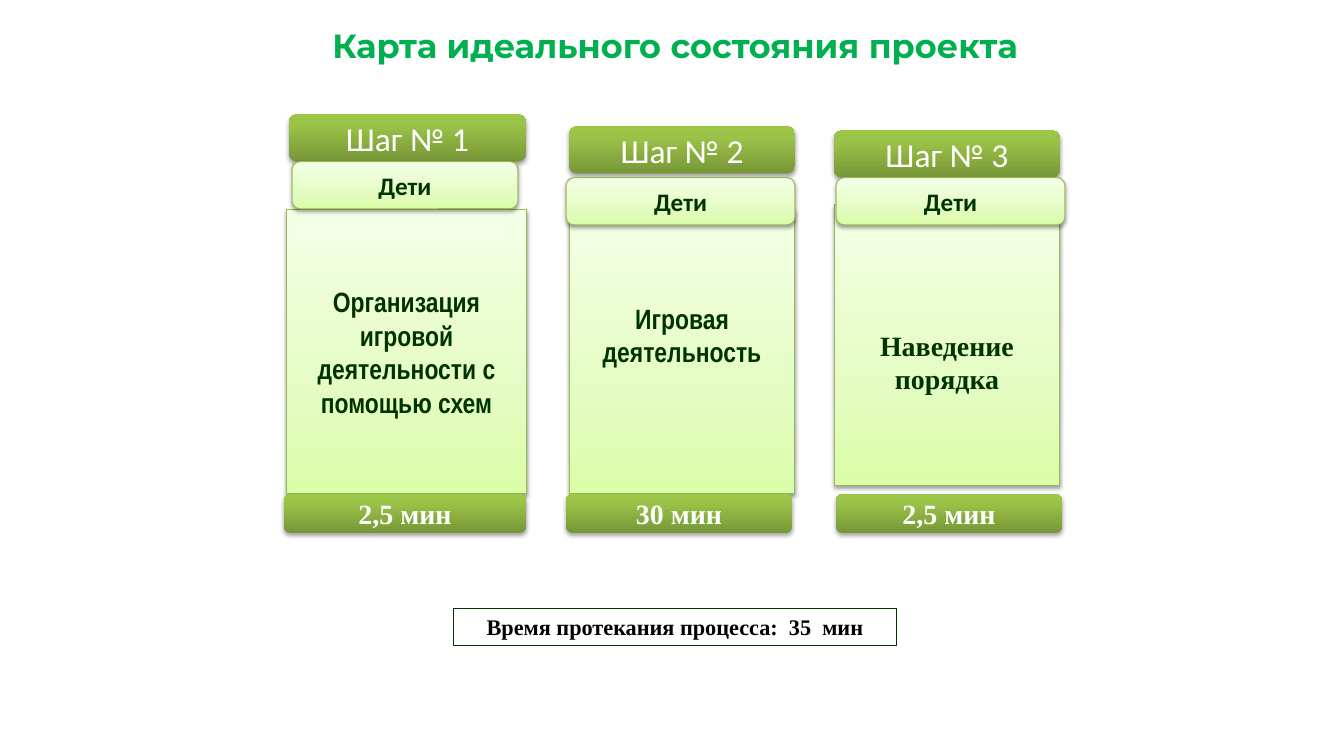
import copy

import pptx
import pptx.dml.color
import pptx.enum.shapes
import pptx.enum.text
import pptx.oxml
import pptx.oxml.ns
import pptx.util

Inches = pptx.util.Inches
Pt = pptx.util.Pt
qn = pptx.oxml.ns.qn
RECT = pptx.enum.shapes.MSO_SHAPE.RECTANGLE
ROUND = pptx.enum.shapes.MSO_SHAPE.ROUNDED_RECTANGLE

# Looks: gradient stops run from the bottom up
DARK = {"stops": [(0, "779737"), (0.8, "9BC348"), (1, "9DC746")],
        "line": None, "shade": (35, 1.8)}
LIGHT = {"stops": [(0, "DAFDA7"), (0.35, "E4FCC2"), (1, "F5FFE7")],
         "line": "98B955", "shade": (38, 1.6)}

# Text formats
TITLE = {"name": "Montserrat", "size": Pt(24), "bold": True, "color": "00B050"}
STEP = {"name": "Calibri", "size": Pt(24), "bold": False, "color": "FFFFFF"}
WHO = {"name": "Calibri", "size": Pt(18), "bold": True, "color": "003300"}
TASK = {"name": "Arial Narrow", "size": Pt(20), "bold": True, "color": "003300"}
SERIF = {**TASK, "name": "Times New Roman"}
TIME = {**SERIF, "color": "FFFFFF"}
TOTAL = {**SERIF, "size": Pt(16), "color": "000000"}

# Each part: left, top, width, height; pad is extra inset above and below
STEPS = [
    {"step": (2.88, 1.14, 2.36, 0.47), "body": (2.85, 2.09, 2.4, 2.83),
     "time": (2.83, 4.92, 2.41, 0.39), "who": (2.91, 1.61, 2.25, 0.47),
     "task": "Организация игровой деятельности с помощью схем",
     "span": "2,5 мин", "font": TASK, "pad": (0, 0)},
    {"step": (5.67, 1.26, 2.25, 0.47), "body": (5.67, 2.08, 2.25, 2.84),
     "time": (5.64, 4.92, 2.25, 0.39), "who": (5.64, 1.77, 2.28, 0.47),
     "task": "Игровая деятельность",
     "span": "30 мин", "font": TASK, "pad": (0, 0.33)},
    {"step": (8.31, 1.3, 2.25, 0.47), "body": (8.31, 2.04, 2.25, 2.8),
     "time": (8.33, 4.92, 2.25, 0.39), "who": (8.33, 1.77, 2.28, 0.47),
     "task": "Наведение порядка",
     "span": "2,5 мин", "font": SERIF, "pad": (0.33, 0)},
]


def paint(code):
    return pptx.dml.color.RGBColor.from_string(code)


def blend(shape, stops):
    shape.fill.gradient()
    shape.fill.gradient_angle = 90
    # The default gradient has two stops; add a third
    row = shape.fill._xPr.find(qn("a:gradFill")).find(qn("a:gsLst"))
    row.append(copy.deepcopy(row[-1]))
    for stop, (place, code) in zip(shape.fill.gradient_stops, stops):
        stop.position = place
        stop.color.rgb = paint(code)


def shade(shape, alpha, drop):
    effect = shape._element.spPr.find(qn("a:effectLst"))
    effect.append(pptx.oxml.parse_xml(
        f'<a:outerShdw {pptx.oxml.ns.nsdecls("a")} blurRad="{Pt(3.1)}" '
        f'dist="{Pt(drop)}" dir="5400000" rotWithShape="0">'
        f'<a:srgbClr val="000000"><a:alpha val="{alpha * 1000}"/></a:srgbClr>'
        '</a:outerShdw>'))


def write(shape, text, form, pad=(0, 0), wrap=True):
    frame = shape.text_frame
    frame.word_wrap = wrap
    frame.vertical_anchor = pptx.enum.text.MSO_ANCHOR.MIDDLE
    frame.margin_top, frame.margin_bottom = (Inches(0.05 + p) for p in pad)
    para = frame.paragraphs[0]
    para.alignment = pptx.enum.text.PP_ALIGN.CENTER
    run = para.add_run()
    run.text = text
    for key, value in form.items():
        if key == "color":
            run.font.color.rgb = paint(value)
        else:
            setattr(run.font, key, value)


def shell(slide, kind, box, line):
    shape = slide.shapes.add_shape(kind, *map(Inches, box))
    shape.shadow.inherit = False
    shape.fill.background()
    if line:
        shape.line.color.rgb = paint(line)
        shape.line.width = Pt(0.75)
    else:
        shape.line.fill.background()
    return shape


def block(slide, kind, box, look, text, form, pad=(0, 0)):
    shape = shell(slide, kind, box, look["line"])
    blend(shape, look["stops"])
    shade(shape, *look["shade"])
    write(shape, text, form, pad)


def main():
    deck = pptx.Presentation()
    deck.slide_width, deck.slide_height = Inches(13.39), Inches(7.48)
    slide = deck.slides.add_slide(deck.slide_layouts[6])

    # Title
    title = shell(slide, RECT, (3.06, 0.2, 7.33, 0.5), "FFFFFF")
    write(title, "Карта идеального состояния проекта", TITLE, wrap=False)

    # Step columns
    for count, step in enumerate(STEPS, 1):
        block(slide, ROUND, step["step"], DARK, f"Шаг № {count}", STEP)
        block(slide, RECT, step["body"], LIGHT, step["task"], step["font"],
              step["pad"])
        block(slide, ROUND, step["time"], DARK, step["span"], TIME)
        block(slide, ROUND, step["who"], LIGHT, "Дети", WHO)

    # Total time
    total = shell(slide, RECT, (4.52, 6.06, 4.41, 0.37), "003300")
    write(total, "Время протекания процесса:  35  мин", TOTAL)

    deck.save("out.pptx")


if __name__ == "__main__":
    main()
